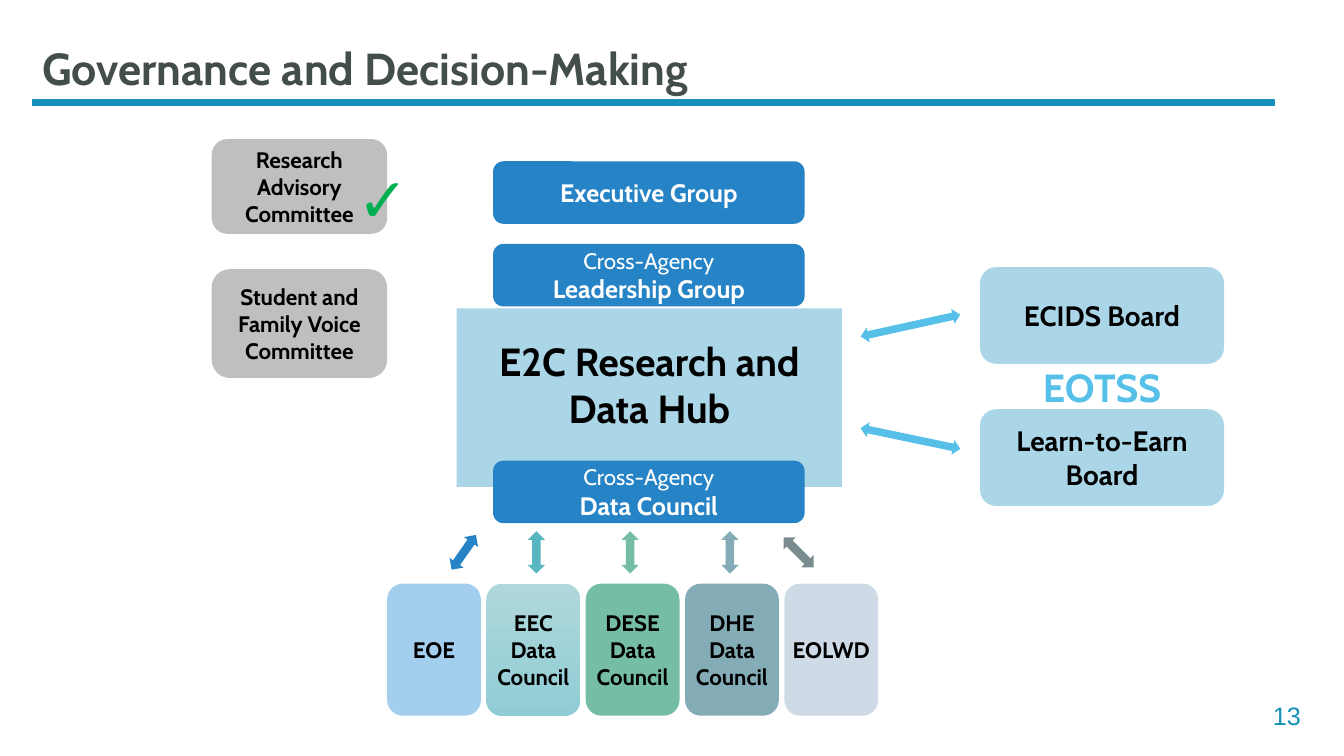
from dataclasses import dataclass

from pptx import Presentation
from pptx.dml.color import RGBColor
from pptx.enum.shapes import MSO_SHAPE as SHAPE
from pptx.enum.text import MSO_ANCHOR as ANCHOR, PP_ALIGN as ALIGN
from pptx.util import Inches, Pt

COLUMNS, ROWS = 13.33, 7.5
UNIT = Inches(1)


@dataclass(frozen=True)
class Theme:
    """Colours, fonts and type sizes of the slide."""
    font: str = "Cabin"
    number_font: str = "Arial"
    check_font: str = "Manrope"
    title: str = "434D4C"
    rule: str = "1590BB"
    dark: str = "000000"
    light: str = "FFFFFF"
    group: str = "2683C6"
    panel: str = "AAD6E7"
    committee: str = "BFBFBF"
    check: str = "00B050"
    accent: str = "57C0E8"
    title_size: int = 32
    check_size: int = 44
    hub_size: int = 28
    board_size: int = 20
    group_size: int = 18
    small_size: int = 16


THEME = Theme()


@dataclass(frozen=True)
class Box:
    """A rectangle in grid columns and rows."""
    x: float
    y: float
    w: float
    h: float

    def inner(self, x, y, w, h):
        """Return a box placed relative to this one."""
        return Box(self.x + x, self.y + y, w, h)

    def emu(self):
        """Return left, top, width and height for python-pptx."""
        return [round(v * UNIT) for v in (self.x, self.y, self.w, self.h)]


def rgb(colour):
    """Turn a hex string into a colour."""
    return RGBColor.from_string(colour)


def write(sp, lines, colour, align=ALIGN.CENTER, font=THEME.font):
    """Fill a shape with (text, size, bold) paragraphs."""
    tf = sp.text_frame
    tf.word_wrap = True
    tf.vertical_anchor = ANCHOR.MIDDLE
    for i, (text, size, bold) in enumerate(lines):
        p = tf.add_paragraph() if i else tf.paragraphs[0]
        p.text = text
        p.alignment = align
        for r in p.runs:
            r.font.name = font
            r.font.size = Pt(size)
            r.font.bold = bold
            r.font.color.rgb = rgb(colour)
    return tf


def add_text(slide, box, *args, **kwargs):
    """Add a text box with formatted paragraphs."""
    return write(slide.shapes.add_textbox(*box.emu()), *args, **kwargs)


def add_block(slide, box, fill, kind=SHAPE.ROUNDED_RECTANGLE):
    """Add a flat shape with a solid fill or a (top, bottom) gradient."""
    sp = slide.shapes.add_shape(kind, *box.emu())
    sp.shadow.inherit = False
    sp.line.fill.background()
    if isinstance(fill, tuple):
        sp.fill.gradient()
        sp.fill.gradient_angle = 270
        for stop, colour, position in zip(sp.fill.gradient_stops, fill, (0, 1)):
            stop.color.rgb = rgb(colour)
            stop.position = position
    else:
        sp.fill.solid()
        sp.fill.fore_color.rgb = rgb(fill)
    return sp


def add_arrow(slide, box, cx, cy, width, length, fill, angle):
    """Add a double arrow centred on a point of the box."""
    place = box.inner(cx - width / 2, cy - length / 2, width, length)
    add_block(slide, place, fill, SHAPE.UP_DOWN_ARROW).rotation = angle


def header(slide, box):
    """Place the title above its rule."""
    rule = add_block(slide, box.inner(0, 0.58, box.w, 0.05), THEME.rule, SHAPE.RECTANGLE)
    rule.line.color.rgb = rgb(THEME.rule)
    rule.line.width = Pt(1)
    tf = add_text(slide, box.inner(0, 0, 11.5, 0.59),
                  [("Governance and Decision-Making", THEME.title_size, True)],
                  THEME.title, ALIGN.LEFT)
    tf.paragraphs[0].line_spacing = 0.9


def footer(slide, box):
    """Place the slide number."""
    add_text(slide, box, [("13", THEME.group_size, False)], THEME.rule,
             ALIGN.RIGHT, THEME.number_font)


def committees(slide, box):
    """Place the two advisory committees and the check mark."""
    for text, y, h in (("Research Advisory Committee", 0, 0.94),
                       ("Student and Family Voice Committee", 1.29, 1.08)):
        sp = add_block(slide, box.inner(0, y, box.w, h), THEME.committee)
        write(sp, [(text, THEME.small_size, True)], THEME.dark)
    tf = add_text(slide, box.inner(1.35, 0.17, 0.38, 0.84),
                  [("✓", THEME.check_size, True)], THEME.check,
                  ALIGN.LEFT, THEME.check_font)
    tf.vertical_anchor = ANCHOR.TOP


def hub(slide, box):
    """Place the hub panel and the three groups around it."""
    panel = add_block(slide, box.inner(0, 1.46, box.w, 1.77), THEME.panel, SHAPE.RECTANGLE)
    tf = write(panel, [("E2C Research and Data Hub", THEME.hub_size, True)], THEME.dark)
    tf.margin_bottom = Inches(0.32)
    for y, prefix, name in ((0, None, "Executive Group"),
                            (0.82, "Cross-Agency", "Leadership Group"),
                            (2.97, "Cross-Agency", "Data Council")):
        lines = [(prefix, THEME.small_size, False)] if prefix else []
        sp = add_block(slide, box.inner(0.36, y, 3.09, 0.62), THEME.group)
        write(sp, lines + [(name, THEME.group_size, True)], THEME.light)


def agencies(slide, box):
    """Place a row of agencies, each with an arrow above."""
    row = (("EOE", "A3CEED", THEME.group, 0.76, 35),
           ("EEC\vData Council", ("AFD8DD", "91CCD4"), "58B6C0", 1.48, 0),
           ("DESE Data Council", "75BDA7", "75BDA7", 2.41, 0),
           ("DHE Data Council", "84ACB6", "84ACB6", 3.4, 0),
           ("EOLWD", "CEDBE6", "7A8C8E", 4.08, 135))
    width, height = 0.93, 1.31
    pitch = (box.w - width) / (len(row) - 1)
    for i, (text, fill, arrow, cx, angle) in enumerate(row):
        sp = add_block(slide, box.inner(i * pitch, box.h - height, width, height), fill)
        tf = write(sp, [(text, THEME.small_size, True)], THEME.dark)
        tf.margin_left = tf.margin_right = 0
        add_arrow(slide, box, cx, 0.21, 0.17, 0.42, arrow, angle)


def boards(slide, box):
    """Place the two boards, the label between them and their arrows."""
    x, width, height = 1.27, 2.42, 0.96
    for text, y, cy, angle in (("ECIDS Board", 0, 0.58, 77.6),
                               ("Learn-to-Earn\vBoard", box.h - height, 1.7, 101.8)):
        sp = add_block(slide, box.inner(x, y, width, height), THEME.panel)
        write(sp, [(text, THEME.board_size, True)], THEME.dark)
        add_arrow(slide, box, 0.58, cy, 0.15, 1.01, THEME.accent, angle)
    add_text(slide, box.inner(x, height, width, box.h - 2 * height),
             [("EOTSS", THEME.hub_size, True)], THEME.accent)


def main():
    """Build and save the slide."""
    prs = Presentation()
    prs.slide_width, prs.slide_height = round(COLUMNS * UNIT), round(ROWS * UNIT)
    slide = prs.slides.add_slide(prs.slide_layouts[6])
    header(slide, Box(0.32, 0.41, 12.32, 0.63))
    committees(slide, Box(2.1, 1.38, 1.74, 2.37))
    hub(slide, Box(4.53, 1.6, 3.82, 3.6))
    agencies(slide, Box(3.84, 5.27, 4.87, 1.83))
    boards(slide, Box(8.45, 2.65, 3.69, 2.37))
    footer(slide, Box(10, 6.89, 3, 0.42))
    prs.save("out.pptx")


if __name__ == "__main__":
    main()
